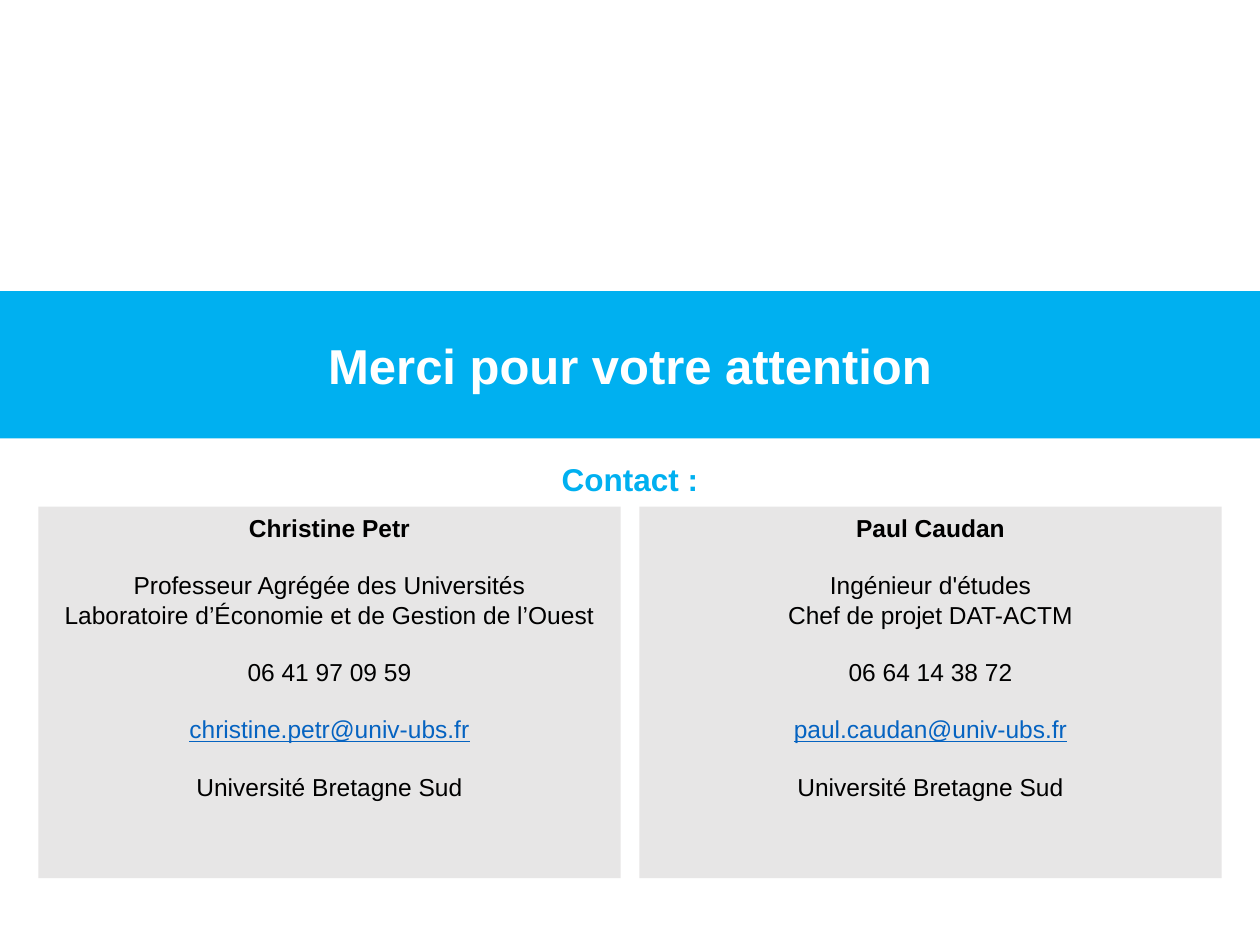
from pptx import Presentation
from pptx.dml.color import RGBColor
from pptx.enum import shapes, text
from pptx.util import Inches, Pt

BLUE = RGBColor(0x00, 0xB0, 0xF0)
GREY = RGBColor(0xE7, 0xE6, 0xE6)
LINK = RGBColor(0x05, 0x63, 0xC1)
BLACK = RGBColor(0, 0, 0)
WHITE = RGBColor(255, 255, 255)

PAGE_WIDTH = 10
CARD_WIDTH, CARD_GAP = 4.62, 0.15
BLOCK_GAP = Pt(16)

# Each contact is a list of blocks; each block is a list of lines.
CONTACTS = [
    [["Christine Petr"],
     ["Professeur Agrégée des Universités",
      "Laboratoire d’Économie et de Gestion de l’Ouest"],
     ["06 41 97 09 59"],
     ["christine.petr@univ-ubs.fr"],
     ["Université Bretagne Sud"]],
    [["Paul Caudan"],
     ["Ingénieur d'études", "Chef de projet DAT-ACTM"],
     ["06 64 14 38 72"],
     ["paul.caudan@univ-ubs.fr"],
     ["Université Bretagne Sud"]],
]


def place(shape, left, top, width, height):
    shape.left, shape.top = Inches(left), Inches(top)
    shape.width, shape.height = Inches(width), Inches(height)


def style(para, size, color, bold=False):
    para.alignment = text.PP_ALIGN.CENTER
    para.font.name = "Arial"
    para.font.size = Pt(size)
    para.font.bold = bold
    para.font.color.rgb = color


def add_banner(page, left, top, width, height):
    title = page.shapes.title
    place(title, left, top, width, height)
    title.fill.solid()
    title.fill.fore_color.rgb = BLUE
    frame = title.text_frame
    frame.text = "Merci pour votre attention"
    frame.vertical_anchor = text.MSO_ANCHOR.MIDDLE
    style(frame.paragraphs[0], 28, WHITE, bold=True)


def add_heading(page, left, top, width, height):
    box = page.shapes.add_textbox(0, 0, 0, 0)
    place(box, left, top, width, height)
    frame = box.text_frame
    frame.word_wrap = True
    frame.vertical_anchor = text.MSO_ANCHOR.MIDDLE
    frame.text = "Contact :"
    style(frame.paragraphs[0], 18, BLUE, bold=True)


def add_card(page, blocks, left, top, width, height):
    card = page.shapes.add_shape(shapes.MSO_SHAPE.RECTANGLE, 0, 0, 0, 0)
    place(card, left, top, width, height)
    card.shadow.inherit = False
    card.fill.solid()
    card.fill.fore_color.rgb = GREY
    card.line.fill.background()
    frame = card.text_frame
    frame.word_wrap = True
    frame.vertical_anchor = text.MSO_ANCHOR.TOP
    frame.text = "\n".join(line for block in blocks for line in block)
    paras = iter(frame.paragraphs)
    for number, block in enumerate(blocks):
        for row, line in enumerate(block):
            para = next(paras)
            is_mail = "@" in line
            style(para, 14, LINK if is_mail else BLACK, bold=number == 0)
            para.font.underline = is_mail
            if number and row == 0:
                para.space_before = BLOCK_GAP


def build():
    deck = Presentation()
    deck.slide_width, deck.slide_height = Inches(PAGE_WIDTH), Inches(7.5)
    page = deck.slides.add_slide(deck.slide_layouts[5])
    add_banner(page, 0, 2.31, PAGE_WIDTH, 1.17)
    first_left = (PAGE_WIDTH - 2 * CARD_WIDTH - CARD_GAP) / 2
    for column, blocks in enumerate(CONTACTS):
        left = first_left + column * (CARD_WIDTH + CARD_GAP)
        add_card(page, blocks, left, 4.02, CARD_WIDTH, 2.95)
    add_heading(page, 0, 3.59, PAGE_WIDTH, 0.43)
    deck.save("out.pptx")


if __name__ == "__main__":
    build()
